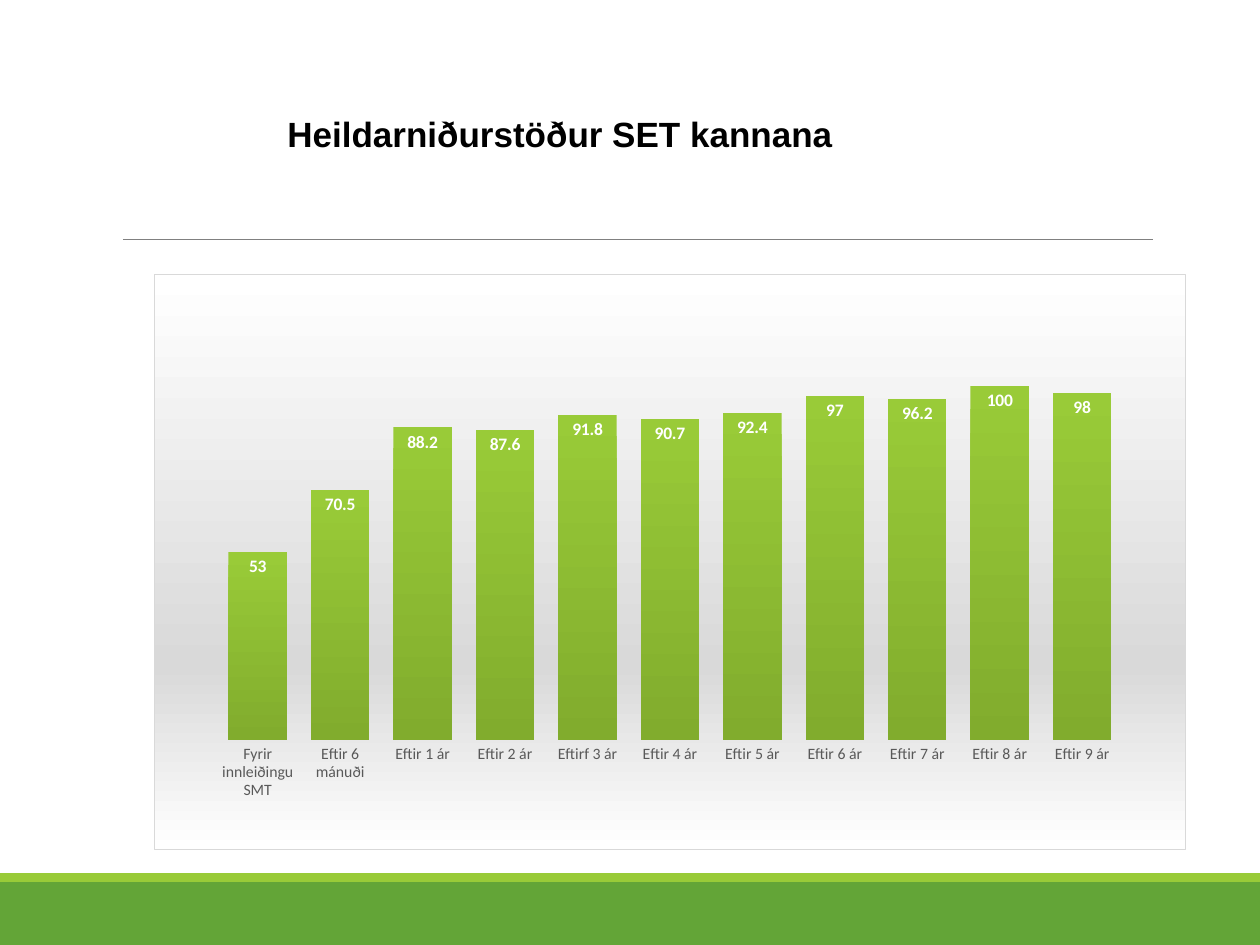
from dataclasses import dataclass

from lxml import etree
from pptx import Presentation
from pptx.chart.data import CategoryChartData
from pptx.dml.color import RGBColor
from pptx.enum.chart import XL_CHART_TYPE, XL_LABEL_POSITION, XL_TICK_MARK
from pptx.enum.shapes import MSO_CONNECTOR, MSO_SHAPE
from pptx.enum.text import MSO_AUTO_SIZE
from pptx.oxml import parse_xml
from pptx.oxml.ns import nsdecls, qn
from pptx.util import Emu, Pt

COLUMNS = XL_CHART_TYPE.COLUMN_CLUSTERED
INSIDE_END = XL_LABEL_POSITION.INSIDE_END
NO_TICK = XL_TICK_MARK.NONE
RECT = MSO_SHAPE.RECTANGLE
STRAIGHT = MSO_CONNECTOR.STRAIGHT
FIT_SHAPE = MSO_AUTO_SIZE.SHAPE_TO_FIT_TEXT


@dataclass(frozen=True)
class Theme:
    green: str = "63A537"
    lime: str = "99CB38"
    lime_dark: str = "81AC2D"
    rule: str = "808080"
    panel: str = "FFFFFF"
    panel_shade: str = "D9D9D9"
    title: str = "000000"
    axis: str = "595959"
    label: str = "FFFFFF"
    title_font: str = "Arial"
    chart_font: str = "Calibri"
    title_size: int = 20
    label_size: int = 10
    axis_size: int = 9
    rule_width: float = 0.5
    border_width: float = 0.75


@dataclass(frozen=True)
class Band:
    top: int
    height: int
    color: str


THEME = Theme()
SLIDE_W, SLIDE_H = 1260, 945
BANDS = [Band(882, 63, THEME.green), Band(873, 9, THEME.lime)]
SCORES = {
    "Fyrir innleiðingu SMT": 53,
    "Eftir 6 mánuði": 70.5,
    "Eftir 1 ár": 88.2,
    "Eftir 2 ár": 87.6,
    "Eftirf 3 ár": 91.8,
    "Eftir 4 ár": 90.7,
    "Eftir 5 ár": 92.4,
    "Eftir 6 ár": 97,
    "Eftir 7 ár": 96.2,
    "Eftir 8 ár": 100,
    "Eftir 9 ár": 98,
}
PLOT_AREA = {"x": 0.06, "y": 0.07, "w": 0.88, "h": 0.74}


def px(n: int) -> Emu:
    return Emu(round(n * 914400 / 126))


def rgb(color: str) -> RGBColor:
    return RGBColor.from_string(color)


def style_font(font, name: str, size: int, color: str, bold: bool = False) -> None:
    font.name, font.size, font.bold = name, Pt(size), bold
    font.color.rgb = rgb(color)


def vertical_gradient(stops: list[tuple[int, str]]):
    """Return a top-to-bottom gradient fill from (percent, colour) stops."""
    gs = "".join(f'<a:gs pos="{pos * 1000}"><a:srgbClr val="{color}"/></a:gs>'
                 for pos, color in stops)
    return parse_xml(f'<a:gradFill {nsdecls("a")} rotWithShape="1"><a:gsLst>{gs}</a:gsLst>'
                     '<a:lin ang="5400000" scaled="0"/></a:gradFill>')


def draw_band(s, band: Band) -> None:
    sp = s.shapes.add_shape(RECT, 0, px(band.top), px(SLIDE_W), px(band.height))
    sp.shadow.inherit = False
    sp.fill.solid()
    sp.fill.fore_color.rgb = rgb(band.color)
    sp.line.fill.background()


def draw_rule(s) -> None:
    line = s.shapes.add_connector(STRAIGHT, px(123), px(239), px(1153), px(239))
    line.line.color.rgb = rgb(THEME.rule)
    line.line.width = Pt(THEME.rule_width)
    etree.SubElement(line._element.spPr, qn("a:effectLst"))


def draw_title(s, text: str) -> None:
    tf = s.shapes.add_textbox(px(275), px(106), px(883), px(55)).text_frame
    tf.word_wrap = True
    tf.auto_size = FIT_SHAPE
    p = tf.paragraphs[0]
    p.text = text
    style_font(p.font, THEME.title_font, THEME.title_size, THEME.title, True)


def style_panel(chart) -> None:
    """Give the chart area its gradient and thin border."""
    sp_pr = parse_xml(
        f'<c:spPr {nsdecls("c", "a")}><a:ln w="{Pt(THEME.border_width)}"><a:solidFill>'
        f'<a:srgbClr val="{THEME.panel_shade}"/></a:solidFill></a:ln></c:spPr>')
    sp_pr.insert(0, vertical_gradient(
        [(0, THEME.panel), (68, THEME.panel_shade), (100, THEME.panel)]))
    chart._chartSpace.find(qn("c:chart")).addnext(sp_pr)


def place_plot(chart) -> None:
    """Fix the inner plot area as fractions of the chart."""
    plot_area = chart._chartSpace.find(".//" + qn("c:plotArea"))
    for old in plot_area.findall(qn("c:layout")):
        plot_area.remove(old)
    modes = "".join(f'<c:{k}Mode val="edge"/>' for k in "xy")
    sizes = "".join(f'<c:{k} val="{v}"/>' for k, v in PLOT_AREA.items())
    plot_area.insert(0, parse_xml(
        f'<c:layout {nsdecls("c")}><c:manualLayout><c:layoutTarget val="inner"/>'
        f'{modes}{sizes}</c:manualLayout></c:layout>'))


def draw_chart(s) -> None:
    data = CategoryChartData()
    data.categories = list(SCORES)
    data.add_series("Series 1", list(SCORES.values()))
    chart = s.shapes.add_chart(COLUMNS, px(154), px(274), px(1032), px(576), data).chart
    chart.has_legend = False
    chart.has_title = False
    style_font(chart.font, THEME.chart_font, THEME.label_size, THEME.title)
    style_panel(chart)
    place_plot(chart)

    val_axis = chart.value_axis
    val_axis.minimum_scale, val_axis.maximum_scale = 0, 120
    val_axis.has_major_gridlines = False
    val_axis.visible = False
    cat_axis = chart.category_axis
    cat_axis.major_tick_mark = NO_TICK
    cat_axis.format.line.fill.background()
    style_font(cat_axis.tick_labels.font, THEME.chart_font, THEME.axis_size, THEME.axis)

    plot = chart.plots[0]
    plot.gap_width = 41
    plot.vary_by_categories = False
    series = plot.series[0]
    series._element.get_or_add_spPr().insert(
        0, vertical_gradient([(0, THEME.lime), (100, THEME.lime_dark)]))
    labels = series.data_labels
    labels.show_value = True
    labels.position = INSIDE_END
    style_font(labels.font, THEME.chart_font, THEME.label_size, THEME.label, True)


def main() -> None:
    prs = Presentation()
    prs.slide_width, prs.slide_height = px(SLIDE_W), px(SLIDE_H)
    s = prs.slides.add_slide(prs.slide_layouts[6])
    for band in BANDS:
        draw_band(s, band)
    draw_rule(s)
    draw_title(s, "Heildarniðurstöður SET kannana")
    draw_chart(s)
    prs.save("out.pptx")


if __name__ == "__main__":
    main()
